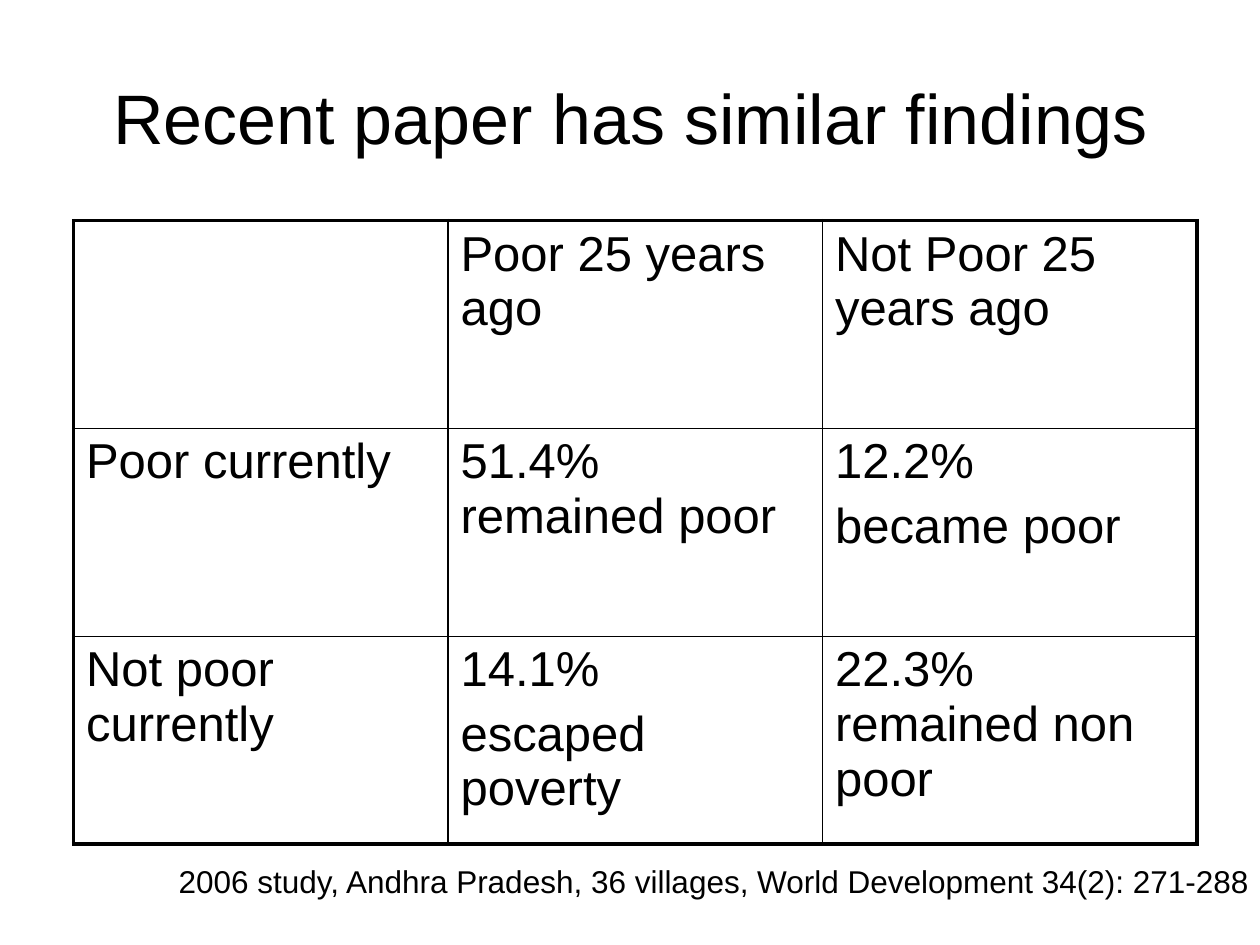
import dataclasses
import typing

import lxml.etree
import pptx
import pptx.dml.color
import pptx.enum.text
import pptx.oxml.ns
import pptx.util

Pt = pptx.util.Pt
qn = pptx.oxml.ns.qn


@dataclasses.dataclass(frozen=True)
class Theme:
    ink: str = "000000"
    face: str = "Arial"
    title: float = 40
    body: float = 28
    note: float = 18
    thick: float = 2.25
    thin: float = 1


@dataclasses.dataclass(frozen=True)
class Box:
    left: float
    top: float
    width: float
    height: float

    def lengths(self) -> tuple:
        return tuple(Pt(v) for v in dataclasses.astuple(self))


THEME = Theme()
TITLE = Box(36, 21.6, 648, 90)
GRID = Box(42, 126, 642, 356.4)
NOTE = Box(95, 489, 628.6, 28.8)

# Each cell holds its paragraphs
CELLS = [
    [[], ["Poor 25 years ago"], ["Not Poor 25 years ago"]],
    [["Poor currently"], ["51.4% remained poor"], ["12.2%", "became poor"]],
    [["Not poor currently"], ["14.1%", "escaped poverty"], ["22.3% remained non poor"]],
]


def format_all(item: typing.Any, values: dict) -> None:
    for name, value in values.items():
        setattr(item, name, value)


def write(frame: typing.Any, lines: list, size: float) -> None:
    """Fill a text frame, with a gap of a fifth of the size between paragraphs."""
    for i, line in enumerate(lines):
        para = frame.paragraphs[0] if i == 0 else frame.add_paragraph()
        run = para.add_run()
        run.text = line
        if i:
            para.space_before = Pt(size / 5)
        format_all(run.font, {"name": THEME.face, "size": Pt(size), "bold": False})
        run.font.color.rgb = pptx.dml.color.RGBColor.from_string(THEME.ink)


def border(cell: typing.Any, side: str, width: float) -> None:
    line = lxml.etree.SubElement(cell._tc.get_or_add_tcPr(), qn("a:ln" + side), w=str(Pt(width)))
    fill = lxml.etree.SubElement(line, qn("a:solidFill"))
    lxml.etree.SubElement(fill, qn("a:srgbClr"), val=THEME.ink)


def draw_grid(slide: typing.Any, rows: list, box: Box) -> None:
    last_row, last_col = len(rows) - 1, len(rows[0]) - 1
    table = slide.shapes.add_table(len(rows), len(rows[0]), *box.lengths()).table
    format_all(table, {"first_row": False, "horz_banding": False})
    for r, row in enumerate(rows):
        for c, lines in enumerate(row):
            cell = table.cell(r, c)
            # Thick lines run round the outside only
            outer = {"L": c == 0, "R": c == last_col, "T": r == 0, "B": r == last_row}
            for side, edge in outer.items():
                border(cell, side, THEME.thick if edge else THEME.thin)
            cell.fill.background()
            write(cell.text_frame, lines, THEME.body)


def main() -> None:
    deck = pptx.Presentation()
    format_all(deck, {"slide_width": Pt(720), "slide_height": Pt(540)})
    slide = deck.slides.add_slide(deck.slide_layouts[5])

    # Title
    title = slide.shapes.title
    format_all(title, dict(zip(("left", "top", "width", "height"), TITLE.lengths())))
    title.text_frame.vertical_anchor = pptx.enum.text.MSO_ANCHOR.MIDDLE
    write(title.text_frame, ["Recent paper has similar findings"], THEME.title)
    title.text_frame.paragraphs[0].alignment = pptx.enum.text.PP_ALIGN.CENTER

    # Poverty table
    draw_grid(slide, CELLS, GRID)

    # Source note
    note = slide.shapes.add_textbox(*NOTE.lengths()).text_frame
    format_all(note, {"word_wrap": False,
                      "auto_size": pptx.enum.text.MSO_AUTO_SIZE.SHAPE_TO_FIT_TEXT})
    write(note, ["2006 study, Andhra Pradesh, 36 villages, World Development 34(2): 271-288"],
          THEME.note)

    deck.save("out.pptx")


if __name__ == "__main__":
    main()
